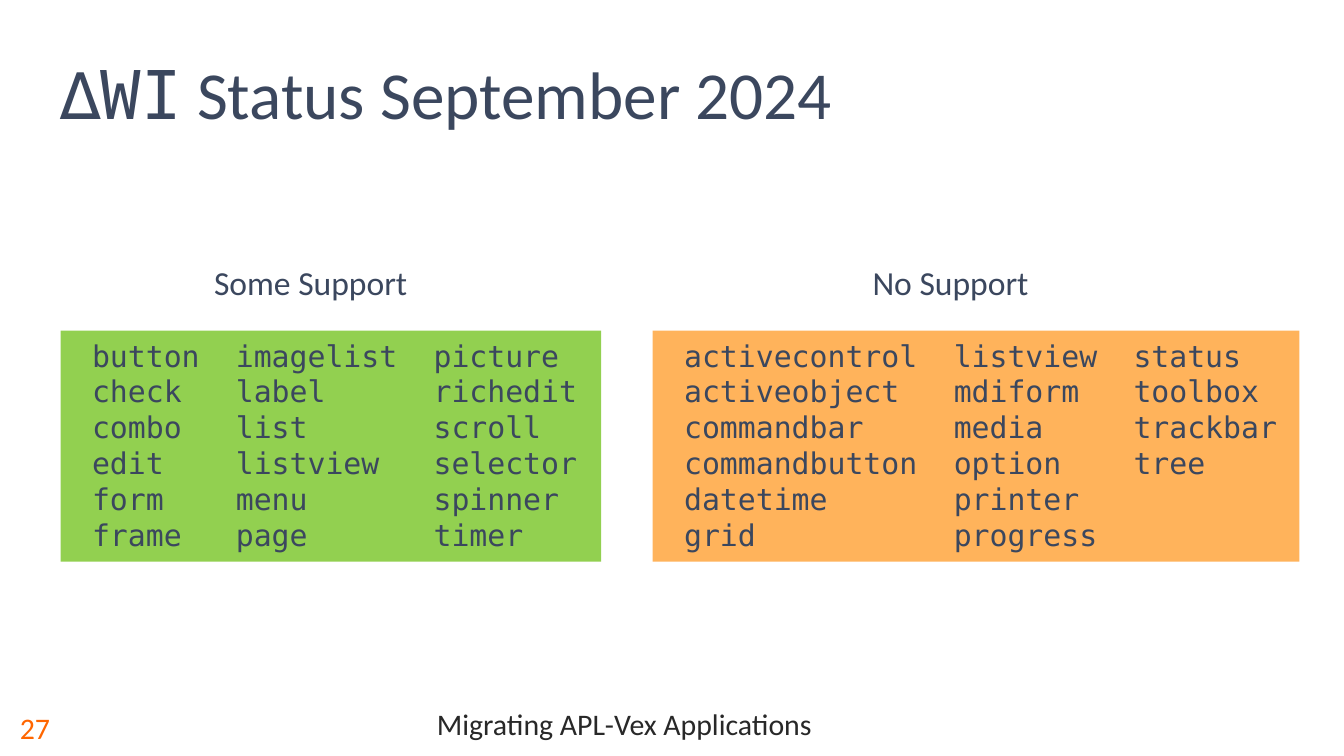
from dataclasses import dataclass

from lxml import etree
from pptx import Presentation
from pptx.dml.color import RGBColor
from pptx.enum import shapes, text
from pptx.oxml import ns
from pptx.util import Pt

SLATE = RGBColor(0x3B, 0x47, 0x5E)
GREEN = RGBColor(0x92, 0xD0, 0x50)
AMBER = RGBColor(0xFF, 0xB3, 0x5B)
INK = RGBColor(0x28, 0x28, 0x28)
ORANGE = RGBColor(0xFF, 0x66, 0x00)
SANS, MONO = "Calibri", "DejaVu Sans Mono"
CHAR = 9.63  # width of one 16 pt mono character
INSET = 7.2


@dataclass
class Label:
    words: str
    left: float
    top: float
    width: float
    height: float
    size: float
    color: RGBColor
    align: text.PP_ALIGN = text.PP_ALIGN.LEFT
    anchor: text.MSO_ANCHOR = text.MSO_ANCHOR.TOP
    wrap: bool = True
    lead: float = 1.0


@dataclass
class Panel:
    left: float
    width: float
    fill: RGBColor
    cols: list[list[str]]


def add_run(para, words: str, font: str, size: float, color: RGBColor) -> None:
    run = para.add_run()
    run.text = words
    run.font.name = font
    run.font.size = Pt(size)
    run.font.color.rgb = color


def add_label(slide, label: Label) -> None:
    box = slide.shapes.add_textbox(Pt(label.left), Pt(label.top),
                                   Pt(label.width), Pt(label.height))
    frame = box.text_frame
    frame.word_wrap = label.wrap
    frame.vertical_anchor = label.anchor
    para = frame.paragraphs[0]
    para.alignment = label.align
    para.line_spacing = label.lead
    add_run(para, label.words, SANS, label.size, label.color)


def add_tabs(para, stops: list[float]) -> None:
    tabs = etree.SubElement(para._p.get_or_add_pPr(), ns.qn("a:tabLst"))
    for stop in stops:
        etree.SubElement(tabs, ns.qn("a:tab"), pos=str(int(Pt(stop))), algn="l")


def add_panel(slide, panel: Panel) -> None:
    box = slide.shapes.add_shape(shapes.MSO_SHAPE.RECTANGLE, Pt(panel.left), Pt(177.1),
                                 Pt(panel.width), Pt(123.8))
    box.shadow.inherit = False
    box.fill.solid()
    box.fill.fore_color.rgb = panel.fill
    box.line.fill.background()
    frame = box.text_frame
    frame.word_wrap = True
    frame.vertical_anchor = text.MSO_ANCHOR.TOP
    frame.margin_left = Pt(INSET + CHAR)
    frame.margin_right = Pt(INSET)

    # Each column starts two characters after the longest word before it
    stops, end = [], 0.0
    for col in panel.cols[:-1]:
        end += (max(map(len, col)) + 2) * CHAR
        stops.append(end)

    for row in range(len(panel.cols[0])):
        para = frame.paragraphs[0] if row == 0 else frame.add_paragraph()
        para.alignment = text.PP_ALIGN.LEFT
        add_tabs(para, stops)
        words = [col[row] for col in panel.cols if row < len(col)]
        add_run(para, "\t".join(words), MONO, 16, SLATE)


LABELS = [
    Label("Migrating APL-Vex Applications", 56.2, 373.7, 556.6, 31.7, 16, INK,
          text.PP_ALIGN.CENTER, text.MSO_ANCHOR.MIDDLE, lead=0.8),
    Label("27", 3.6, 373.7, 52.6, 31.7, 16, ORANGE, anchor=text.MSO_ANCHOR.MIDDLE),
    Label("Some Support", 107.6, 137, 126, 29, 18, SLATE, wrap=False),
    Label("No Support", 460.4, 137, 103.7, 29, 18, SLATE, wrap=False),
]

PANELS = [
    Panel(32.5, 289.6, GREEN, [
        ["button", "check", "combo", "edit", "form", "frame"],
        ["imagelist", "label", "list", "listview", "menu", "page"],
        ["picture", "richedit", "scroll", "selector", "spinner", "timer"],
    ]),
    Panel(349.7, 346.4, AMBER, [
        ["activecontrol", "activeobject", "commandbar", "commandbutton",
         "datetime", "grid"],
        ["listview", "mdiform", "media", "option", "printer", "progress"],
        ["status", "toolbox", "trackbar", "tree"],
    ]),
]


def main() -> None:
    deck = Presentation()
    deck.slide_width, deck.slide_height = Pt(720), Pt(405)
    slide = deck.slides.add_slide(deck.slide_layouts[5])

    # Title
    title = slide.shapes.title
    title.left, title.top = Pt(25.2), Pt(20.9)
    title.width, title.height = Pt(514), Pt(54)
    frame = title.text_frame
    frame.auto_size = text.MSO_AUTO_SIZE.NONE
    frame.vertical_anchor = text.MSO_ANCHOR.BOTTOM
    para = frame.paragraphs[0]
    para.alignment = text.PP_ALIGN.LEFT
    add_run(para, "∆WI", MONO, 36, SLATE)
    add_run(para, " Status September 2024", SANS, 36, SLATE)

    # Word panels, then headings and footer
    for panel in PANELS:
        add_panel(slide, panel)
    for label in LABELS:
        add_label(slide, label)

    deck.save("out.pptx")


if __name__ == "__main__":
    main()
